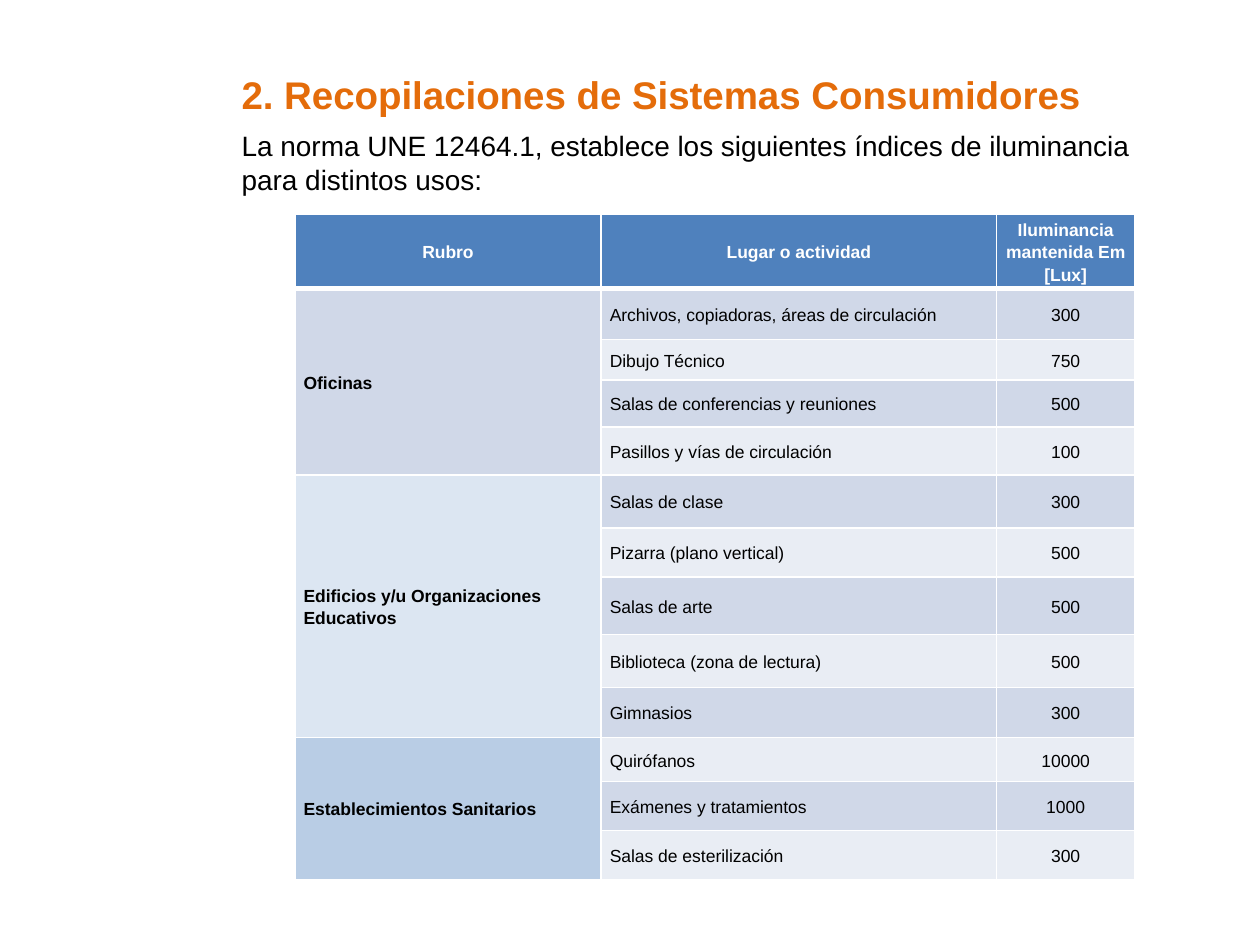
from dataclasses import dataclass

from lxml.etree import SubElement
from pptx import Presentation
from pptx.dml.color import RGBColor
from pptx.enum.text import MSO_ANCHOR, PP_ALIGN
from pptx.oxml.ns import qn
from pptx.util import Pt


@dataclass(frozen=True)
class Theme:
    font: str = "Arial"
    title_size: float = 22
    body_size: float = 16
    table_size: float = 10
    accent: str = "E46C0A"
    text: str = "000000"
    white: str = "FFFFFF"
    header: str = "4F81BD"
    bands: tuple = ("D0D8E8", "E9EDF4")


class SlideBuilder:
    def __init__(self, s, theme):
        self.s = s
        self.theme = theme

    def style(self, p, size, color, bold=False):
        for r in p.runs:
            r.font.name = self.theme.font
            r.font.size = Pt(size)
            r.font.bold = bold
            r.font.color.rgb = RGBColor.from_string(color)

    def text(self, box, text, size, color, bold=False, anchor=MSO_ANCHOR.TOP):
        tf = self.s.shapes.add_textbox(*map(Pt, box)).text_frame
        tf.word_wrap = True
        tf.vertical_anchor = anchor
        tf.text = text
        self.style(tf.paragraphs[0], size, color, bold)

    def border(self, cell, side, width):
        ln = SubElement(cell._tc.get_or_add_tcPr(), qn(f"a:ln{side}"), w=str(Pt(width)))
        fill = SubElement(ln, qn("a:solidFill"))
        SubElement(fill, qn("a:srgbClr"), val=self.theme.white)

    def cell(self, cell, text, fill, color, bold=False, centered=False, top=1, bottom=1):
        for side, width in (("L", 1), ("R", 1), ("T", top), ("B", bottom)):
            self.border(cell, side, width)
        cell.fill.solid()
        cell.fill.fore_color.rgb = RGBColor.from_string(fill)
        cell.vertical_anchor = MSO_ANCHOR.MIDDLE
        cell.margin_left = cell.margin_right = Pt(5)
        cell.margin_top = cell.margin_bottom = 0
        cell.text_frame.text = text
        for p in cell.text_frame.paragraphs:
            p.line_spacing = 1.15
            p.alignment = PP_ALIGN.CENTER if centered else PP_ALIGN.LEFT
            self.style(p, self.theme.table_size, color, bold)

    def table(self, left, top, widths, heights, headers, groups):
        t = self.theme
        table = self.s.shapes.add_table(
            len(heights), len(widths), Pt(left), Pt(top),
            Pt(sum(widths)), Pt(sum(heights))).table
        for column, width in zip(table.columns, widths):
            column.width = Pt(width)
        for row, height in zip(table.rows, heights):
            row.height = Pt(height)

        # Header row
        for i, header in enumerate(headers):
            self.cell(table.cell(0, i), header, t.header, t.white,
                      bold=True, centered=True, bottom=3)

        # One merged label per group, with banded rows beside it
        row = 1
        for label, fill, places in groups:
            first = row
            for place, lux in places:
                rule = 3 if row == 1 else 1
                band = t.bands[(row - 1) % 2]
                self.cell(table.cell(row, 0), label if row == first else "",
                          fill, t.text, bold=True, top=rule)
                self.cell(table.cell(row, 1), place, band, t.text, top=rule)
                self.cell(table.cell(row, 2), str(lux), band, t.text,
                          centered=True, top=rule)
                row += 1
            table.cell(first, 0).merge(table.cell(row - 1, 0))


HEADERS = ["Rubro", "Lugar o actividad", "Iluminancia\nmantenida Em [Lux]"]
GROUPS = [
    ("Oficinas", "D0D8E8", [
        ("Archivos, copiadoras, áreas de circulación", 300),
        ("Dibujo Técnico", 750),
        ("Salas de conferencias y reuniones", 500),
        ("Pasillos y vías de circulación", 100),
    ]),
    ("Edificios y/u Organizaciones Educativos", "DCE6F2", [
        ("Salas de clase", 300),
        ("Pizarra (plano vertical)", 500),
        ("Salas de arte", 500),
        ("Biblioteca (zona de lectura)", 500),
        ("Gimnasios", 300),
    ]),
    ("Establecimientos Sanitarios", "B9CDE5", [
        ("Quirófanos", 10000),
        ("Exámenes y tratamientos", 1000),
        ("Salas de esterilización", 300),
    ]),
]
COLUMN_WIDTHS = [175, 226, 79]
ROW_HEIGHTS = [42.2, 29.2, 23.3, 26.8, 27.4, 30.3, 28, 33.1, 30.3, 28.4, 25.4, 28, 28]


def main():
    prs = Presentation()
    prs.slide_width, prs.slide_height = Pt(720), Pt(540)
    theme = Theme()
    builder = SlideBuilder(prs.slides.add_slide(prs.slide_layouts[6]), theme)

    # Introduction and title
    builder.text((131, 70, 553, 448.5),
                 "La norma UNE 12464.1, establece los siguientes índices de "
                 "iluminancia para distintos usos:", theme.body_size, theme.text)
    builder.text((131, 37.5, 518, 32.5), "2. Recopilaciones de Sistemas Consumidores",
                 theme.title_size, theme.accent, bold=True, anchor=MSO_ANCHOR.MIDDLE)

    # Illuminance table
    builder.table(168.5, 122.5, COLUMN_WIDTHS, ROW_HEIGHTS, HEADERS, GROUPS)
    prs.save("out.pptx")


if __name__ == "__main__":
    main()
